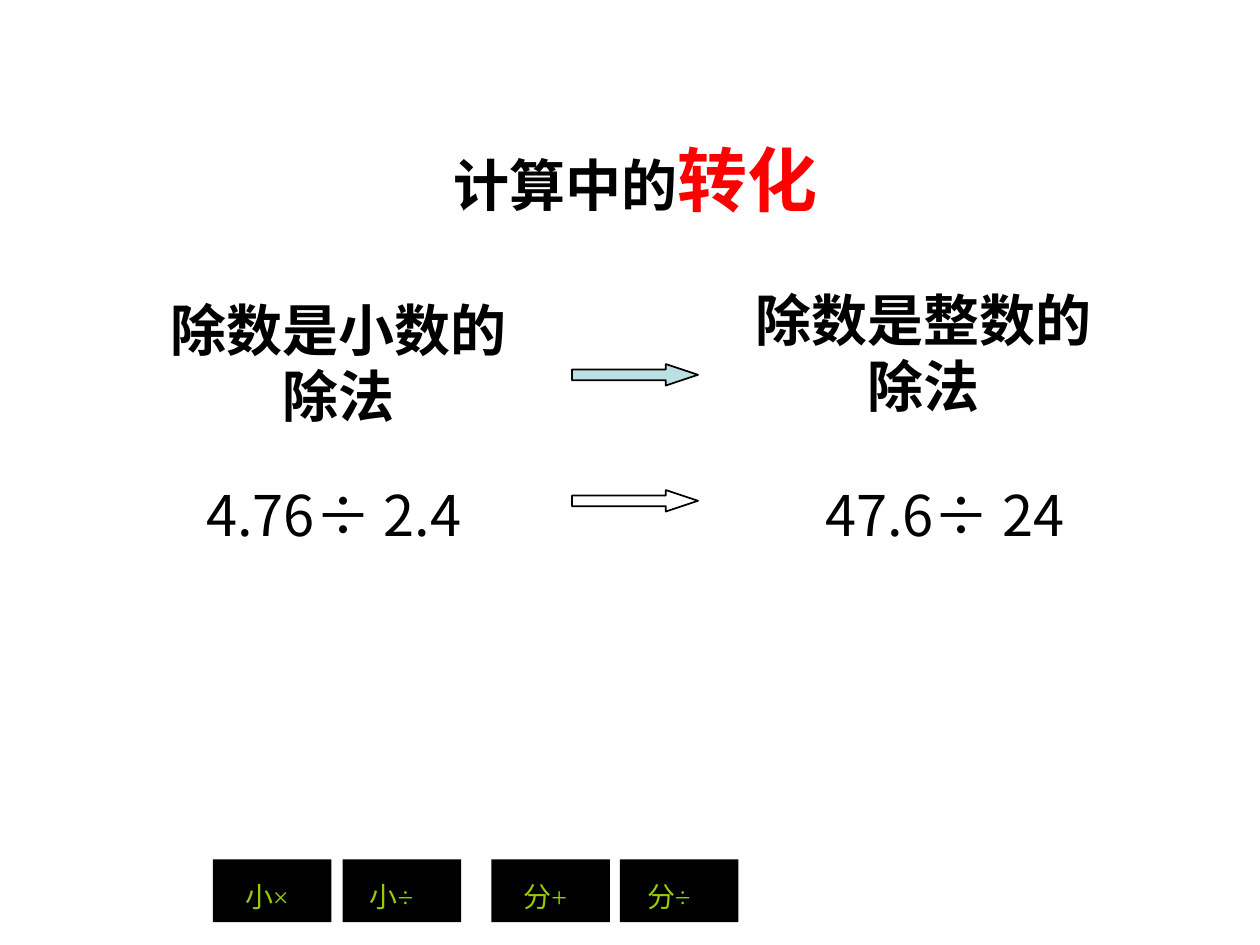
"""Builds a slide on turning decimal division into whole-number division."""
from dataclasses import dataclass

from pptx import Presentation
from pptx.dml.color import RGBColor
from pptx.enum.shapes import MSO_SHAPE
from pptx.enum.text import MSO_ANCHOR, PP_ALIGN
from pptx.util import Inches, Pt

RIGHT_ARROW, RECTANGLE = MSO_SHAPE.RIGHT_ARROW, MSO_SHAPE.RECTANGLE
CENTER, TOP, MIDDLE = PP_ALIGN.CENTER, MSO_ANCHOR.TOP, MSO_ANCHOR.MIDDLE


@dataclass(frozen=True)
class Theme:
    black: str = "000000"
    white: str = "FFFFFF"
    red: str = "FF0000"
    pale_blue: str = "BBE0E3"
    lime: str = "99CC00"
    body_font: str = "Noto Sans CJK SC"
    title_font: str = "Arial"
    button_font: str = "Times New Roman"
    body: int = 32
    emphasis: int = 40
    button: int = 16
    button_gap: int = 24
    body_line: int = 38


THEME = Theme()


def write(shape, runs, font, bold=False, anchor=TOP):
    frame = shape.text_frame
    frame.word_wrap = True
    frame.vertical_anchor = anchor
    paragraph = frame.paragraphs[0]
    paragraph.alignment = CENTER
    for words, size, color in runs:
        run = paragraph.add_run()
        run.text = words
        run.font.name = font
        run.font.size = Pt(size)
        run.font.bold = bold
        run.font.color.rgb = RGBColor.from_string(color)
    return paragraph


def add_filled(slide, kind, box, fill):
    shape = slide.shapes.add_shape(kind, *map(Inches, box))
    shape.shadow.inherit = False
    shape.fill.solid()
    shape.fill.fore_color.rgb = RGBColor.from_string(fill)
    return shape


deck = Presentation()
deck.slide_width, deck.slide_height = Inches(10), Inches(7.5)
slide = deck.slides.add_slide(deck.slide_layouts[6])

title = slide.shapes.add_textbox(*map(Inches, (1.93, 0.76, 6.22, 1.32)))
title_runs = [("计算中的", THEME.body, THEME.black), ("转化", THEME.emphasis, THEME.red)]
write(title, title_runs, THEME.title_font, bold=True, anchor=MIDDLE)

statements = [
    ("除数是小数的除法", (1.23, 2.26, 2.92, 1.18), True),
    ("除数是整数的除法", (5.87, 2.18, 2.92, 1.18), True),
    ("4.76÷ 2.4 ", (0.94, 3.73, 3.52, 0.64), False),
    ("47.6÷ 24", (5.71, 3.73, 3.58, 0.64), False),
]
for words, box, bold in statements:
    statement = slide.shapes.add_textbox(*map(Inches, box))
    line = write(statement, [(words, THEME.body, THEME.black)], THEME.body_font, bold)
    line.line_spacing = Pt(THEME.body_line)
    statement.text_frame.margin_top = Inches(0.09)
    statement.text_frame.margin_bottom = Inches(0)

for top, fill in ((2.89, THEME.pale_blue), (3.89, THEME.white)):
    arrow = add_filled(slide, RIGHT_ARROW, (4.54, top, 1, 0.17), fill)
    arrow.adjustments[0], arrow.adjustments[1] = 0.5, 1.5
    arrow.line.color.rgb = RGBColor.from_string(THEME.black)
    arrow.line.width = Pt(1)

buttons = [("小×", 1.69, 0.1), ("小÷", 2.72, 0.18), ("分+", 3.9, 0.1), ("分÷", 4.92, 0.18)]
for label, left, right_margin in buttons:
    button = add_filled(slide, RECTANGLE, (left, 6.82, 0.94, 0.5), THEME.black)
    button.line.fill.background()
    button.text_frame.margin_right = Inches(right_margin)
    label_runs = [(label, THEME.button, THEME.lime), (" ", THEME.button_gap, THEME.lime)]
    write(button, label_runs, THEME.button_font)

deck.save("out.pptx")
